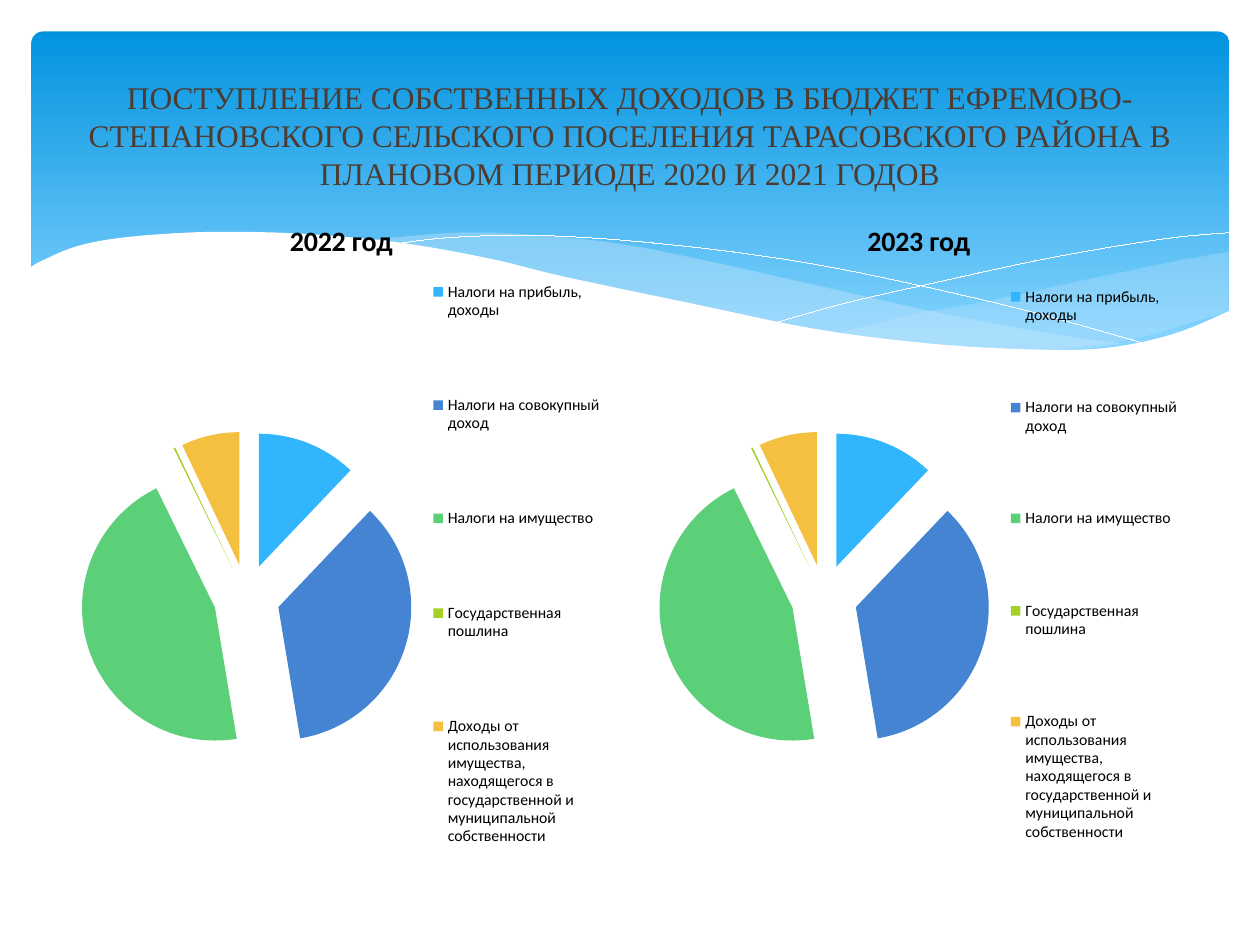
import pptx
import pptx.chart.data
import pptx.dml.color
import pptx.enum.chart
import pptx.enum.shapes
import pptx.enum.text
import pptx.oxml
import pptx.oxml.ns
import pptx.util
from lxml import etree

Pt = pptx.util.Pt
qn = pptx.oxml.ns.qn

COLORS = {
    "sky_top": "0293E0", "sky_bottom": "83D3FE", "wave": "C6E7FC",
    "white": "FFFFFF", "black": "000000", "title": "4E3B30",
}
SLICE_COLORS = ["31B6FD", "4584D3", "5BD078", "A5D028", "F5C040"]
CATEGORIES = [
    "Налоги на прибыль, доходы",
    "Налоги на совокупный доход",
    "Налоги на имущество",
    "Государственная пошлина",
    "Доходы от использования имущества, находящегося в "
    "государственной и муниципальной собственности",
]
VALUES = [12, 35, 45, 0.2, 7]
TITLE = ("ПОСТУПЛЕНИЕ СОБСТВЕННЫХ ДОХОДОВ В БЮДЖЕТ ЕФРЕМОВО-СТЕПАНОВСКОГО "
         "СЕЛЬСКОГО ПОСЕЛЕНИЯ ТАРАСОВСКОГО РАЙОНА В ПЛАНОВОМ ПЕРИОДЕ "
         "2020 И 2021 ГОДОВ")

# Knots in points, relative to the top left corner of the backdrop
RIGHT_WAVE = [
    [(684, 126), (655, 131), (602, 142), (542, 155), (507, 161), (458, 173)],
    [(458, 173), (490, 177), (536, 181.5), (583, 181.5), (628, 176), (667, 165), (684, 160)],
]
MIDDLE_WAVE = [
    [(625, 178.5), (585, 173), (515, 160), (435, 142), (381, 130), (334, 121),
     (284, 116), (242, 115), (188, 119.5)],
    [(188, 119.5), (243, 128), (305, 142), (390, 161), (450, 172), (502, 178),
     (547, 182), (592, 182), (625, 178.5)],
]
LINE_DOWN = [(204, 122), (236, 118), (282, 116.5), (334, 119), (401, 126),
             (461, 135.5), (529, 150), (580, 162.5), (635, 178)]
LINE_UP = [(423, 167), (466, 155), (521, 142.5), (584, 129), (647, 118.5), (684, 115)]
PAPER_EDGE = [(-1, 135), (6, 131), (25, 123), (50, 118), (87, 115), (121, 114.5),
              (162, 116), (213, 121), (263, 130), (304, 140), (380, 156), (448, 170),
              (510, 178), (565, 181.5), (612, 181), (652, 173), (686, 159)]


def smooth(knots, steps=6):
    """Return points on the Catmull-Rom curve through the knots."""
    ends = [knots[0], *knots, knots[-1]]
    points = [knots[0]]
    for a, b, c, d in zip(ends, ends[1:], ends[2:], ends[3:]):
        for i in range(1, steps + 1):
            t = i / steps
            points.append(tuple(
                0.5 * (2 * q + (r - p) * t + (2 * p - 5 * q + 4 * r - u) * t ** 2
                       + (3 * q - p - 3 * r + u) * t ** 3)
                for p, q, r, u in zip(a, b, c, d)))
    return points


def rgb(name):
    return pptx.dml.color.RGBColor.from_string(COLORS.get(name, name))


def add_outline(s, left, top, points, fill=None, alpha=None, line=None):
    emu = [(Pt(left + x), Pt(top + y)) for x, y in points]
    builder = s.shapes.build_freeform(*emu[0])
    builder.add_line_segments(emu[1:], close=fill is not None)
    sp = builder.convert_to_shape()
    sp.shadow.inherit = False
    if fill:
        sp.fill.solid()
        sp.fill.fore_color.rgb = rgb(fill)
    else:
        sp.fill.background()
    if alpha:
        color = sp.element.spPr.find(qn("a:solidFill"))[0]
        etree.SubElement(color, qn("a:alpha")).set("val", str(alpha * 1000))
    if line:
        sp.line.color.rgb = rgb(line)
        sp.line.width = Pt(0.01)
    else:
        sp.line.fill.background()


def add_backdrop(s, left, top, width, height):
    sky = s.shapes.add_shape(pptx.enum.shapes.MSO_SHAPE.ROUNDED_RECTANGLE,
                             Pt(left), Pt(top), Pt(width), Pt(height))
    sky.adjustments[0] = 0.034
    sky.shadow.inherit = False
    sky.line.fill.background()
    sky.fill.gradient()
    sky.fill.gradient_angle = 270
    for stop, name, position in zip(sky.fill.gradient_stops,
                                    ("sky_top", "sky_bottom"), (0, 0.9)):
        stop.color.rgb = rgb(name)
        stop.position = position

    for wave, alpha in ((RIGHT_WAVE, 29), (MIDDLE_WAVE, 40)):
        points = [pt for edge in wave for pt in smooth(edge)]
        add_outline(s, left, top, points, fill="wave", alpha=alpha)
    for knots in (LINE_DOWN, LINE_UP):
        add_outline(s, left, top, smooth(knots), line="white")
    paper = smooth(PAPER_EDGE) + [(width + 1, 219), (-1, 219)]
    add_outline(s, left, top, paper, fill="white")


def write(tf, text, size, color, font, bold=False, align=None, spacing=None):
    p = tf.paragraphs[0]
    p.alignment = align
    p.line_spacing = spacing
    r = p.add_run()
    r.text = text
    r.font.size, r.font.bold, r.font.name = Pt(size), bold, font
    r.font.color.rgb = rgb(color)


def add_title(s, left, top, width, height):
    sp = s.shapes.title
    sp.left, sp.top, sp.width, sp.height = map(Pt, (left, top, width, height))
    sp.text_frame.word_wrap = True
    sp.text_frame.vertical_anchor = pptx.enum.text.MSO_ANCHOR.MIDDLE
    write(sp.text_frame, TITLE, 18, "title", "Times New Roman",
          align=pptx.enum.text.PP_ALIGN.CENTER, spacing=Pt(21.7))
    s.shapes.element.append(sp.element)  # in front of the backdrop


def set_layout(part, x, y, w, h, inner=False):
    """Fix a chart part's box, in fractions of the chart."""
    for old in part.findall(qn("c:layout")):
        part.remove(old)
    layout = etree.Element(qn("c:layout"))
    manual = etree.SubElement(layout, qn("c:manualLayout"))
    settings = [("layoutTarget", "inner")] if inner else []
    settings += [("xMode", "edge"), ("yMode", "edge"),
                 ("x", x), ("y", y), ("w", w), ("h", h)]
    for tag, value in settings:
        etree.SubElement(manual, qn("c:" + tag)).set("val", str(value))
    if inner:
        part.insert(0, layout)
    else:
        part.find(qn("c:legendPos")).addnext(layout)


def add_income_pie(s, name, left, top, width, height, legend_height):
    data = pptx.chart.data.CategoryChartData()
    data.categories = CATEGORIES
    data.add_series(name, VALUES)
    chart = s.shapes.add_chart(pptx.enum.chart.XL_CHART_TYPE.PIE, Pt(left), Pt(top),
                               Pt(width), Pt(height), data).chart
    chart.font.size, chart.font.name = Pt(9), "Calibri"
    chart.font.color.rgb = rgb("black")
    chart.has_title = True
    write(chart.chart_title.text_frame, name, 16, "black", "Calibri", bold=True)
    chart.chart_title.include_in_layout = False
    chart.has_legend = True
    chart.legend.position = pptx.enum.chart.XL_LEGEND_POSITION.RIGHT
    chart.legend.include_in_layout = False

    plot = chart.plots[0]
    plot.vary_by_categories = True
    series = plot.series[0]
    for i, color in enumerate(SLICE_COLORS):
        fill = series.points[i].format.fill
        fill.solid()
        fill.fore_color.rgb = rgb(color)
    explosion = etree.Element(qn("c:explosion"))
    explosion.set("val", "25")
    series._element.find(qn("c:dPt")).addprevious(explosion)
    for point in series._element.findall(qn("c:dPt")):
        point.find(qn("c:spPr")).addprevious(
            etree.fromstring(etree.tostring(explosion)))

    plot_area = chart.element.find(".//" + qn("c:plotArea"))
    set_layout(plot_area, 0.03, 0.32, 0.6, 0.45, inner=True)
    set_layout(chart.legend._element, 0.65, (1 - legend_height) / 2, 0.33,
               legend_height)


def main():
    prs = pptx.Presentation()
    prs.slide_width, prs.slide_height = Pt(720), Pt(540)
    s = prs.slides.add_slide(prs.slide_layouts[5])
    add_backdrop(s, 18, 18, 684.5, 194.5)
    add_title(s, 36, 37.5, 648, 79)
    for i, (year, legend_height) in enumerate((("2022 год", 0.97), ("2023 год", 0.95))):
        add_income_pie(s, year, 36 + 330 * i, 111.5, 318, 422, legend_height)
    prs.save("out.pptx")


if __name__ == "__main__":
    main()
